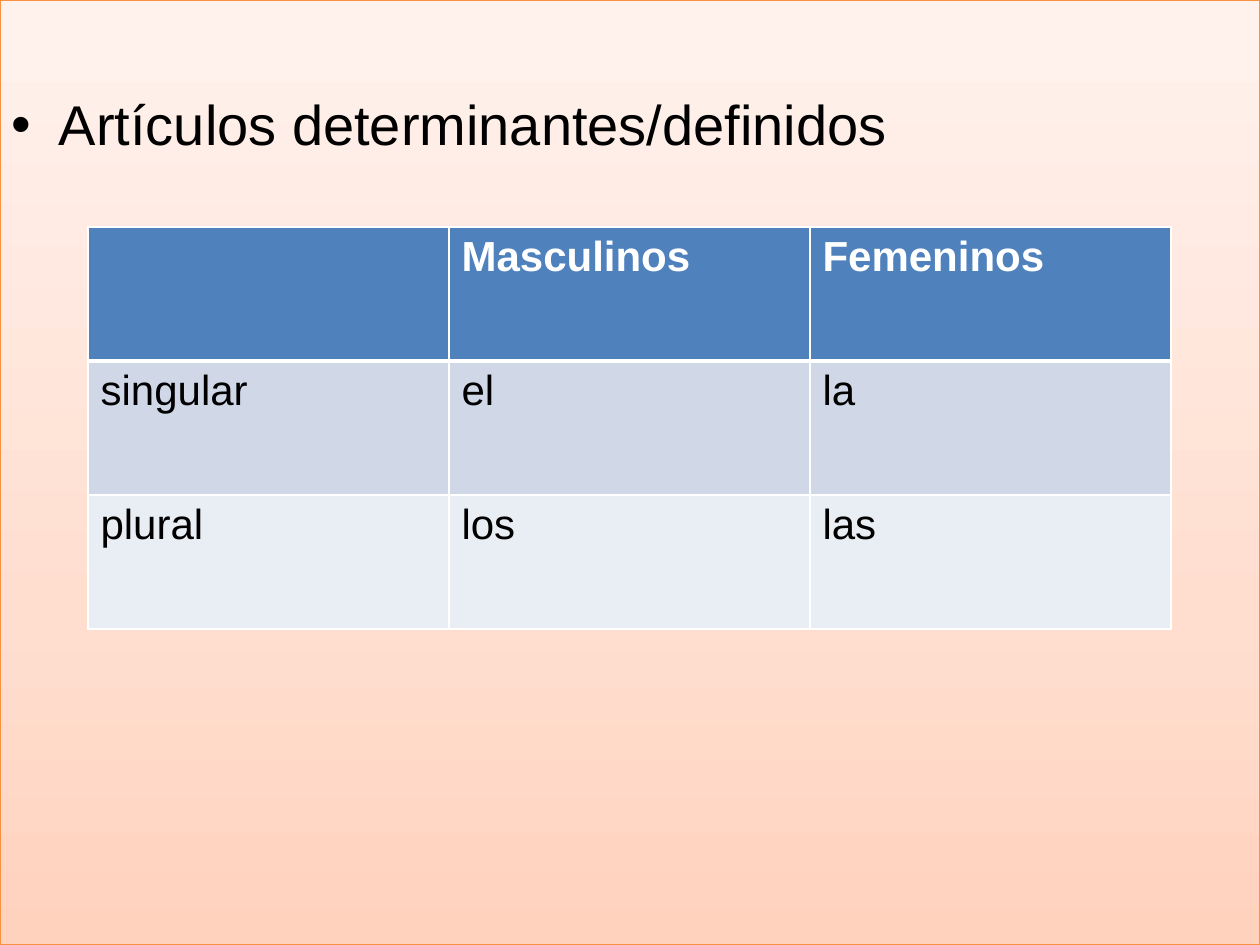
from copy import deepcopy

from lxml.etree import SubElement
from pptx import Presentation
from pptx.dml.color import RGBColor
from pptx.enum.shapes import MSO_SHAPE
from pptx.enum.text import MSO_ANCHOR, PP_ALIGN
from pptx.oxml.ns import qn
from pptx.util import Emu, Pt


def px(length):
    return Emu(round(length * 914400 / 126))


def color(value):
    return RGBColor.from_string(value)


class SlideBuilder:
    """Draws the elements of one slide in a shared style."""

    font = "Arial"
    text = "000000"
    border = "FFFFFF"

    def __init__(self, presentation):
        self.slide = presentation.slides.add_slide(presentation.slide_layouts[6])

    def add_text(self, paragraph, text, size, hex_color, bold=False):
        run = paragraph.add_run()
        run.text = text
        formats = {"name": self.font, "size": Pt(size), "bold": bold}
        for name, value in formats.items():
            setattr(run.font, name, value)
        run.font.color.rgb = color(hex_color)

    def add_panel(self, left, top, width, height, stops, line):
        shape = self.slide.shapes.add_shape(
            MSO_SHAPE.RECTANGLE, px(left), px(top), px(width), px(height))
        shape.shadow.inherit = False
        shape.line.color.rgb = color(line)
        shape.line.width = Pt(0.75)
        shape.fill.gradient()
        shape.fill.gradient_angle = 90
        stop_list = shape._element.spPr.find(".//" + qn("a:gsLst"))
        stop_list.append(deepcopy(stop_list[0]))
        for stop, (position, value) in zip(shape.fill.gradient_stops, stops):
            stop.position = position
            stop.color.rgb = color(value)
        return shape

    def add_bullet(self, shape, text, top, indent):
        formats = {"word_wrap": True, "vertical_anchor": MSO_ANCHOR.TOP,
                   "margin_top": px(top), "margin_left": px(12)}
        for name, value in formats.items():
            setattr(shape.text_frame, name, value)
        paragraph = shape.text_frame.paragraphs[0]
        paragraph.alignment = PP_ALIGN.LEFT
        properties = paragraph._p.get_or_add_pPr()
        properties.set("marL", str(px(indent)))
        properties.set("indent", str(-px(indent)))
        SubElement(properties, qn("a:buFont"), typeface=self.font)
        SubElement(properties, qn("a:buChar"), char="•")
        self.add_text(paragraph, text, 32, self.text)

    def add_borders(self, cell, widths):
        properties = cell._tc.get_or_add_tcPr()
        for position, (side, width) in enumerate(widths.items()):
            line = SubElement(properties, qn(f"a:ln{side}"), w=str(Pt(width)))
            fill = SubElement(line, qn("a:solidFill"))
            SubElement(fill, qn("a:srgbClr"), val=self.border)
            properties.insert(position, line)

    def add_table(self, left, top, column_width, row_height, rows, fills):
        row_count, column_count = len(rows), len(rows[0])
        table = self.slide.shapes.add_table(
            row_count, column_count, px(left), px(top),
            px(column_width * column_count), px(row_height * row_count)).table
        for r, (texts, fill) in enumerate(zip(rows, fills)):
            header = r == 0
            widths = {"L": 1, "R": 1, "T": 3 if r == 1 else 1, "B": 3 if header else 1}
            for c, text in enumerate(texts):
                cell = table.cell(r, c)
                cell.fill.solid()
                cell.fill.fore_color.rgb = color(fill)
                self.add_borders(cell, widths)
                if text:
                    self.add_text(cell.text_frame.paragraphs[0], text, 24,
                                  "FFFFFF" if header else self.text, header)


def main():
    presentation = Presentation()
    presentation.slide_width, presentation.slide_height = px(1260), px(945)
    builder = SlideBuilder(presentation)
    panel = builder.add_panel(
        0, 0, 1260, 945,
        [(0, "FFD2BD"), (0.35, "FFDED0"), (1, "FFF2ED")], "F69240")
    builder.add_bullet(panel, "Artículos determinantes/definidos", 90, 47)
    builder.add_table(
        88, 227, 361, 134,
        [["", "Masculinos", "Femeninos"],
         ["singular", "el", "la"],
         ["plural", "los", "las"]],
        ["4F81BD", "D0D8E8", "E9EDF4"])
    presentation.save("out.pptx")


if __name__ == "__main__":
    main()
